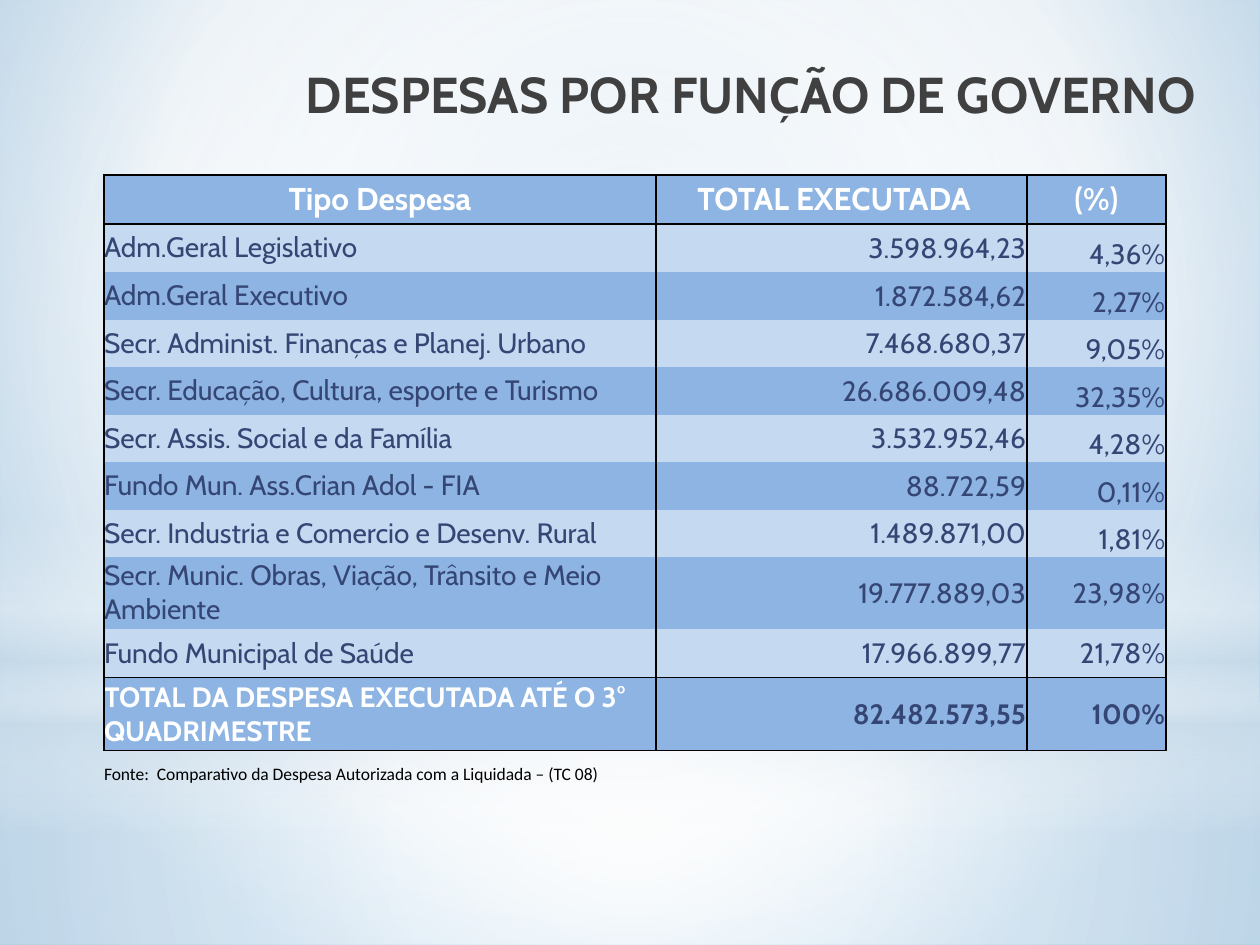
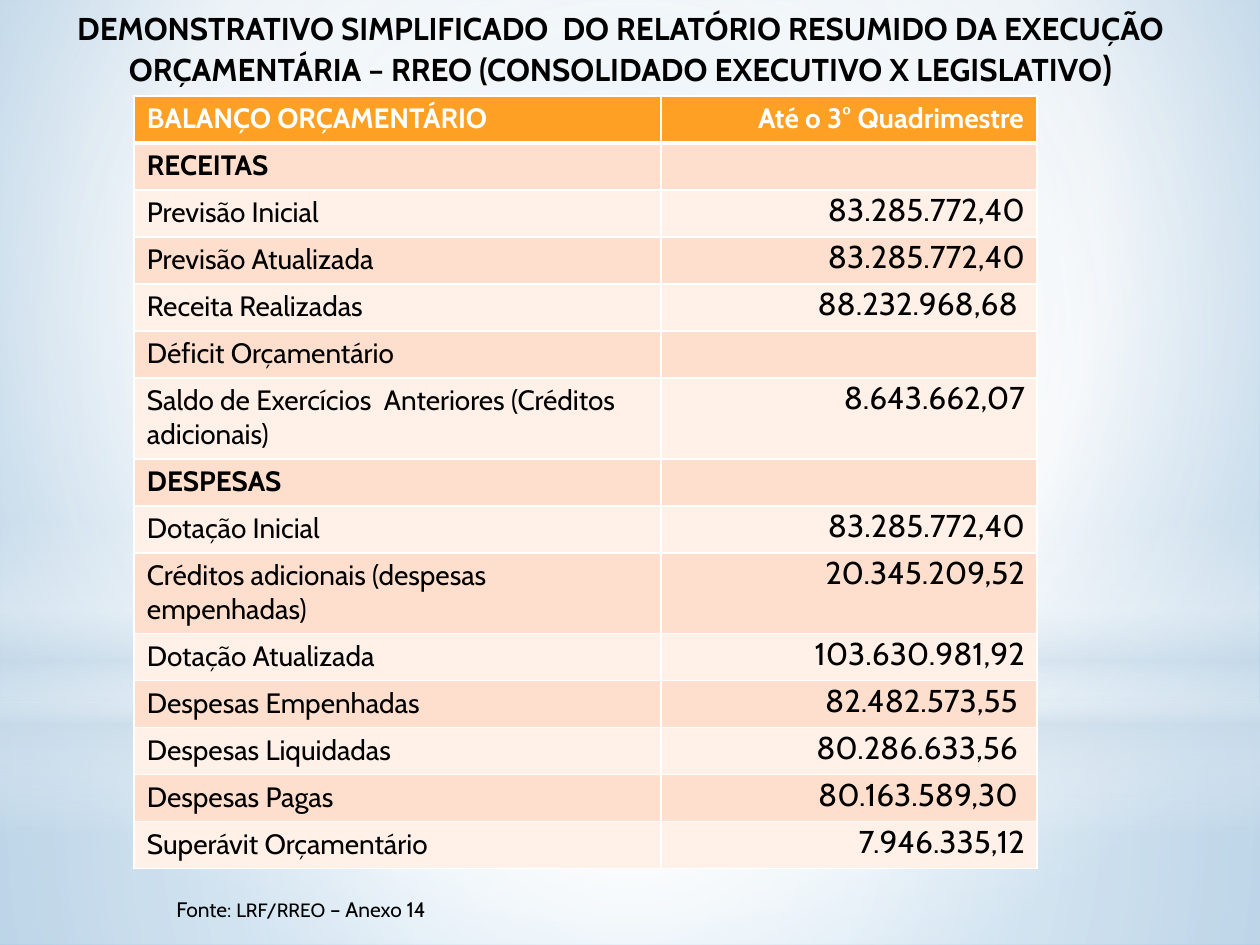
from lxml import etree
from pptx import Presentation
from pptx.dml.color import RGBColor
from pptx.enum.shapes import MSO_SHAPE
from pptx.enum.text import MSO_ANCHOR, PP_ALIGN
from pptx.oxml.ns import qn
from pptx.util import Pt

PX = 914400 / 126
W, H = 1260, 945
FONT = "Cabin"
LEFT, CENTER, RIGHT = PP_ALIGN.LEFT, PP_ALIGN.CENTER, PP_ALIGN.RIGHT
TOP, MIDDLE, BOTTOM = MSO_ANCHOR.TOP, MSO_ANCHOR.MIDDLE, MSO_ANCHOR.BOTTOM
NO_TABLE_STYLE = "{2D5ABB26-0587-4C30-8999-92F81FD0307C}"

COLORS = {
    "black": "000000", "white": "FFFFFF", "title": "404040", "navy": "354675",
    "blue": "8DB4E2", "pale_blue": "C5D9F1", "mist": "CCDDEA",
    "orange": "FDA023", "peach": "FEDFCD", "pale_peach": "FFF0E8",
    "sky": "BCD5E8", "deep_sky": "82B6DE",
}

# Gradient stops: position %, colour, opacity %
BACKDROP = [(0, "sky", 100), (60, "white", 100), (100, "deep_sky", 100)]
CENTRE = (50, 50, 50, 50)
BANDS = [
    (MSO_SHAPE.RECTANGLE, (0, 703, W, 242), CENTRE,
     [(0, "white", 91), (37, "white", 76), (100, "mist", 79)]),
    (MSO_SHAPE.RECTANGLE, (0, 0, W, 703), CENTRE,
     [(0, "white", 89), (48, "white", 62), (100, "mist", 79)]),
    (MSO_SHAPE.RECTANGLE, (0, 519, W, 315), None,
     [(0, "white", 0), (29, "white", 30), (45, "mist", 40),
      (55, "white", 26), (65, "mist", 60), (100, "white", 0)]),
    (MSO_SHAPE.OVAL, (0, 220, W, 703), CENTRE,
     [(0, "white", 100), (56, "white", 0)]),
]

EXPENSES_TITLE = "DESPESAS POR FUNÇÃO DE GOVERNO"
EXPENSES = [
    ("Tipo Despesa", "TOTAL EXECUTADA", "(%)"),
    ("Adm.Geral Legislativo", "3.598.964,23", "4,36%"),
    ("Adm.Geral Executivo", "1.872.584,62", "2,27%"),
    ("Secr. Administ. Finanças e Planej. Urbano", "7.468.680,37", "9,05%"),
    ("Secr. Educação, Cultura, esporte e Turismo", "26.686.009,48", "32,35%"),
    ("Secr. Assis. Social e da Família", "3.532.952,46", "4,28%"),
    ("Fundo Mun. Ass.Crian Adol - FIA", "88.722,59", "0,11%"),
    ("Secr. Industria e Comercio e Desenv. Rural", "1.489.871,00", "1,81%"),
    ("Secr. Munic. Obras, Viação, Trânsito e Meio Ambiente",
     "19.777.889,03", "23,98%"),
    ("Fundo Municipal de Saúde", "17.966.899,77", "21,78%"),
    ("TOTAL DA DESPESA EXECUTADA ATÉ O 3° QUADRIMESTRE",
     "82.482.573,55", "100%"),
    ("Fonte:  Comparativo da Despesa Autorizada com a Liquidada – (TC 08)",
     "", ""),
]
EXPENSE_COLS = [552, 371, 139]
EXPENSE_ROWS = [49, 48, 48, 47, 48, 47, 48, 47, 72, 49, 73, 48]

BALANCE_TITLE = [
    ("DEMONSTRATIVO SIMPLIFICADO  DO RELATÓRIO RESUMIDO DA EXECUÇÃO "
     "ORÇAMENTÁRIA – RREO (CONSOLIDADO EXECUTIVO X LEGISLATIVO", 18),
    (")", 20),
]
BALANCE_SOURCE = [("Fonte: ", 12), ("LRF/RREO", 11), (" – Anexo 14", 12)]
BALANCE = [
    ("BALANÇO ORÇAMENTÁRIO", "Até o 3° Quadrimestre"),
    ("RECEITAS", ""),
    ("Previsão Inicial", "83.285.772,40"),
    ("Previsão Atualizada", "83.285.772,40"),
    ("Receita Realizadas", "88.232.968,68 "),
    ("Déficit Orçamentário", ""),
    ("Saldo de Exercícios  Anteriores (Créditos adicionais)", "8.643.662,07"),
    ("DESPESAS", ""),
    ("Dotação Inicial", "83.285.772,40"),
    ("Créditos adicionais (despesas empenhadas)", "20.345.209,52"),
    ("Dotação Atualizada", "103.630.981,92"),
    ("Despesas Empenhadas", "82.482.573,55 "),
    ("Despesas Liquidadas", "80.286.633,56 "),
    ("Despesas Pagas", "80.163.589,30 "),
    ("Superávit Orçamentário", "7.946.335,12"),
]
BALANCE_COLS = [527, 376]
TWO_LINE_ROWS = (6, 9)
SECTIONS = ("RECEITAS", "DESPESAS")


def px(n):
    return round(n * PX)


def rgb(name):
    return RGBColor.from_string(COLORS[name])


def sub(parent, tag, **attrs):
    return etree.SubElement(parent, qn(tag), {k: str(v) for k, v in attrs.items()})


def set_gradient(fill, owner, stops, focus):
    """Circular around focus (left, top, right, bottom %), or downward if None."""
    fill.gradient()
    grad = next(owner.iter(qn("a:gradFill")))
    for child in list(grad):
        grad.remove(child)
    stop_list = sub(grad, "a:gsLst")
    for pos, color, opacity in stops:
        stop = sub(stop_list, "a:gs", pos=pos * 1000)
        clr = sub(stop, "a:srgbClr", val=COLORS[color])
        if opacity < 100:
            sub(clr, "a:alpha", val=opacity * 1000)
    if focus:
        path = sub(grad, "a:path", path="circle")
        sub(path, "a:fillToRect", **{k: v * 1000 for k, v in zip("ltrb", focus)})
    else:
        sub(grad, "a:lin", ang=90 * 60000, scaled=0)


def new_slide(prs):
    slide = prs.slides.add_slide(prs.slide_layouts[6])
    set_gradient(slide.background.fill, slide.element, BACKDROP, (20, 10, 20, 60))
    for kind, box, focus, stops in BANDS:
        sp = slide.shapes.add_shape(kind, *map(px, box))
        sp.shadow.inherit = False
        sp.line.fill.background()
        set_gradient(sp.fill, sp.element, stops, focus)
    return slide


def add_runs(p, runs, color, bold=False, align=LEFT, font=FONT):
    p.alignment = align
    for text, size in runs:
        r = p.add_run()
        r.text = text
        r.font.size = Pt(size)
        r.font.name = font
        r.font.bold = bold
        r.font.color.rgb = rgb(color)


def add_text(slide, box, runs, color, **style):
    tf = slide.shapes.add_textbox(*map(px, box)).text_frame
    tf.word_wrap = True
    add_runs(tf.paragraphs[0], runs, color, **style)


def new_table(slide, left, top, cols, rows):
    frame = slide.shapes.add_table(len(rows), len(cols), px(left), px(top),
                                   px(sum(cols)), px(sum(rows)))
    table = frame.table
    table.first_row = table.horz_banding = False
    next(frame.element.iter(qn("a:tableStyleId"))).text = NO_TABLE_STYLE
    for column, width in zip(table.columns, cols):
        column.width = px(width)
    for row, height in zip(table.rows, rows):
        row.height = px(height)
    return table


def fill_cell(cell, fill, insets, anchor=TOP):
    """Insets run left, top, right, bottom."""
    (cell.margin_left, cell.margin_top,
     cell.margin_right, cell.margin_bottom) = map(px, insets)
    cell.vertical_anchor = anchor
    if fill:
        cell.fill.solid()
        cell.fill.fore_color.rgb = rgb(fill)
    else:
        cell.fill.background()


def set_borders(cell, color, widths):
    """Widths map the sides L, R, T, B to points; call after the fill is set."""
    tc_pr = cell._tc.get_or_add_tcPr()
    sides = [side for side in "LRTB" if side in widths]
    for i, side in enumerate(sides):
        ln = sub(tc_pr, f"a:ln{side}", w=Pt(widths[side]))
        sub(sub(ln, "a:solidFill"), "a:srgbClr", val=COLORS[color])
        tc_pr.insert(i, ln)


def expenses_slide(prs):
    slide = new_slide(prs)
    add_text(slide, (74, 57, 1134, 69), [(EXPENSES_TITLE, 28.8)], "title",
             bold=True, align=RIGHT)
    table = new_table(slide, 104, 175, EXPENSE_COLS, EXPENSE_ROWS)
    source = len(EXPENSES) - 1
    total = source - 1
    for i, values in enumerate(EXPENSES):
        for j, text in enumerate(values):
            cell = table.cell(i, j)
            fill = None if i == source else "pale_blue" if i % 2 else "blue"
            insets = (1, 1, 1, 0) if i and j else (0, 0, 0, 0)
            if (i, j) == (0, 1):
                insets = (0, 0, 15, 0)
            low = j == 2 and 1 <= i <= 7
            fill_cell(cell, fill, insets, BOTTOM if low else MIDDLE)
            sides = "T" if i == source else "LRTB" if i in (0, total) else "LR"
            set_borders(cell, "black", dict.fromkeys(sides, 1))
            if not text:
                continue
            p = cell.text_frame.paragraphs[0]
            if i == source:
                add_runs(p, [(text, 10)], "black", font="Calibri")
            elif i == 0:
                add_runs(p, [(text, 18)], "white", bold=True, align=CENTER)
            else:
                add_runs(p, [(text, 16)],
                         "white" if i == total and j == 0 else "navy",
                         bold=i == total, align=RIGHT if j else LEFT)
    table.cell(source, 0).merge(table.cell(source, 1))


def balance_slide(prs):
    slide = new_slide(prs)
    rows = [81 if i in TWO_LINE_ROWS else 47 for i in range(len(BALANCE))]
    table = new_table(slide, 134, 96, BALANCE_COLS, rows)
    for i, values in enumerate(BALANCE):
        fill = "orange" if i == 0 else "peach" if i % 2 else "pale_peach"
        for j, text in enumerate(values):
            cell = table.cell(i, j)
            is_amount = i > 0 and j == 1
            fill_cell(cell, fill, (1, 1, 12, 0) if is_amount else (13, 6, 13, 6))
            widths = dict.fromkeys("LRTB", 1)
            if i < 2:
                widths["T" if i else "B"] = 3
            set_borders(cell, "white", widths)
            if text:
                add_runs(cell.text_frame.paragraphs[0],
                         [(text, 18 if is_amount else 16)],
                         "black" if i else "white",
                         bold=i == 0 or text in SECTIONS,
                         align=RIGHT if j else LEFT)
    add_text(slide, (25, 3, 1191, 93), BALANCE_TITLE, "black",
             bold=True, align=CENTER)
    add_text(slide, (164, 890, 476, 38), BALANCE_SOURCE, "black")


def main():
    prs = Presentation()
    prs.slide_width, prs.slide_height = px(W), px(H)
    expenses_slide(prs)
    balance_slide(prs)
    prs.save("out.pptx")


if __name__ == "__main__":
    main()
